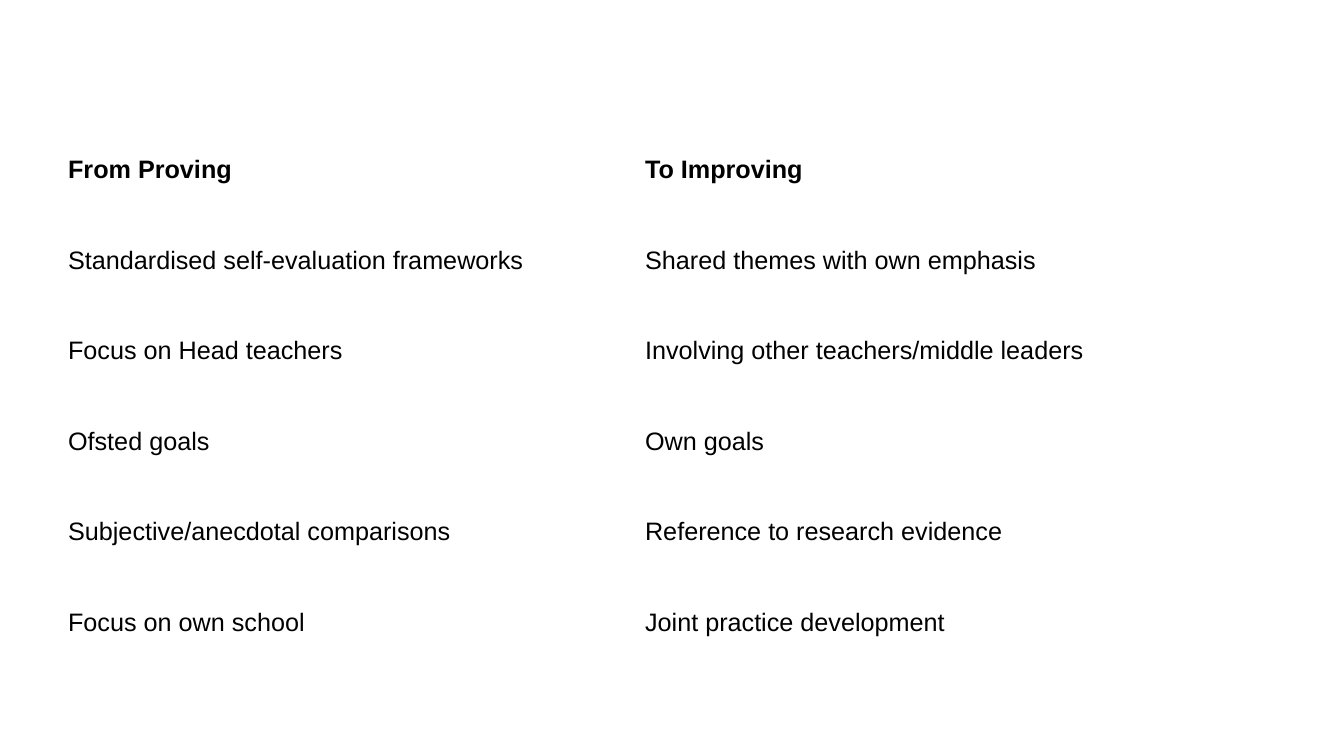
from lxml.etree import SubElement
from pptx import Presentation
from pptx.dml.color import RGBColor
from pptx.enum.text import MSO_ANCHOR, PP_ALIGN
from pptx.oxml.ns import qn
from pptx.util import Pt

ROWS = [
    ("From Proving", "To Improving"),
    ("Standardised self-evaluation frameworks", "Shared themes with own emphasis"),
    ("Focus on Head teachers", "Involving other teachers/middle leaders"),
    ("Ofsted goals", "Own goals"),
    ("Subjective/anecdotal comparisons", "Reference to research evidence"),
    ("Focus on own school", "Joint practice development"),
]
COLORS = {"text": "000000", "cell": "FFFFFF", "border": "FFFFFF"}
FONT = "Arial"
SLIDE_W, SLIDE_H = 1344, 756
LEFT, TOP, WIDTH, HEIGHT = 58, 151, 1154, 543
EMU_PER_PX = 914400 / 100.8


def px(length):
    return round(length * EMU_PER_PX)


def write(frame, text, size=18, bold=False, color="text"):
    paragraph = frame.paragraphs[0]
    paragraph.alignment = PP_ALIGN.LEFT
    run = paragraph.add_run()
    run.text = text
    run.font.name = FONT
    run.font.size = Pt(size)
    run.font.bold = bold
    run.font.color.rgb = RGBColor.from_string(COLORS[color])


def set_borders(cell, **widths):
    """Draw the sides L, R, T and B, 1 pt wide unless given in widths."""
    properties = cell._tc.get_or_add_tcPr()
    for side in "LRTB":
        line = SubElement(properties, qn(f"a:ln{side}"), w=str(Pt(widths.get(side, 1))))
        fill = SubElement(line, qn("a:solidFill"))
        SubElement(fill, qn("a:srgbClr"), val=COLORS["border"])


def main():
    presentation = Presentation()
    presentation.slide_width, presentation.slide_height = px(SLIDE_W), px(SLIDE_H)
    slide = presentation.slides.add_slide(presentation.slide_layouts[6])
    comparison = slide.shapes.add_table(
        len(ROWS), len(ROWS[0]), px(LEFT), px(TOP), px(WIDTH), px(HEIGHT)
    ).table

    for row_index, row in enumerate(ROWS):
        for column_index, text in enumerate(row):
            cell = comparison.cell(row_index, column_index)
            cell.vertical_anchor = MSO_ANCHOR.TOP
            set_borders(cell, B=3 if row_index == 0 else 1, T=3 if row_index == 1 else 1)
            cell.fill.solid()
            cell.fill.fore_color.rgb = RGBColor.from_string(COLORS["cell"])
            write(cell.text_frame, text, bold=row_index == 0)

    presentation.save("out.pptx")


if __name__ == "__main__":
    main()
